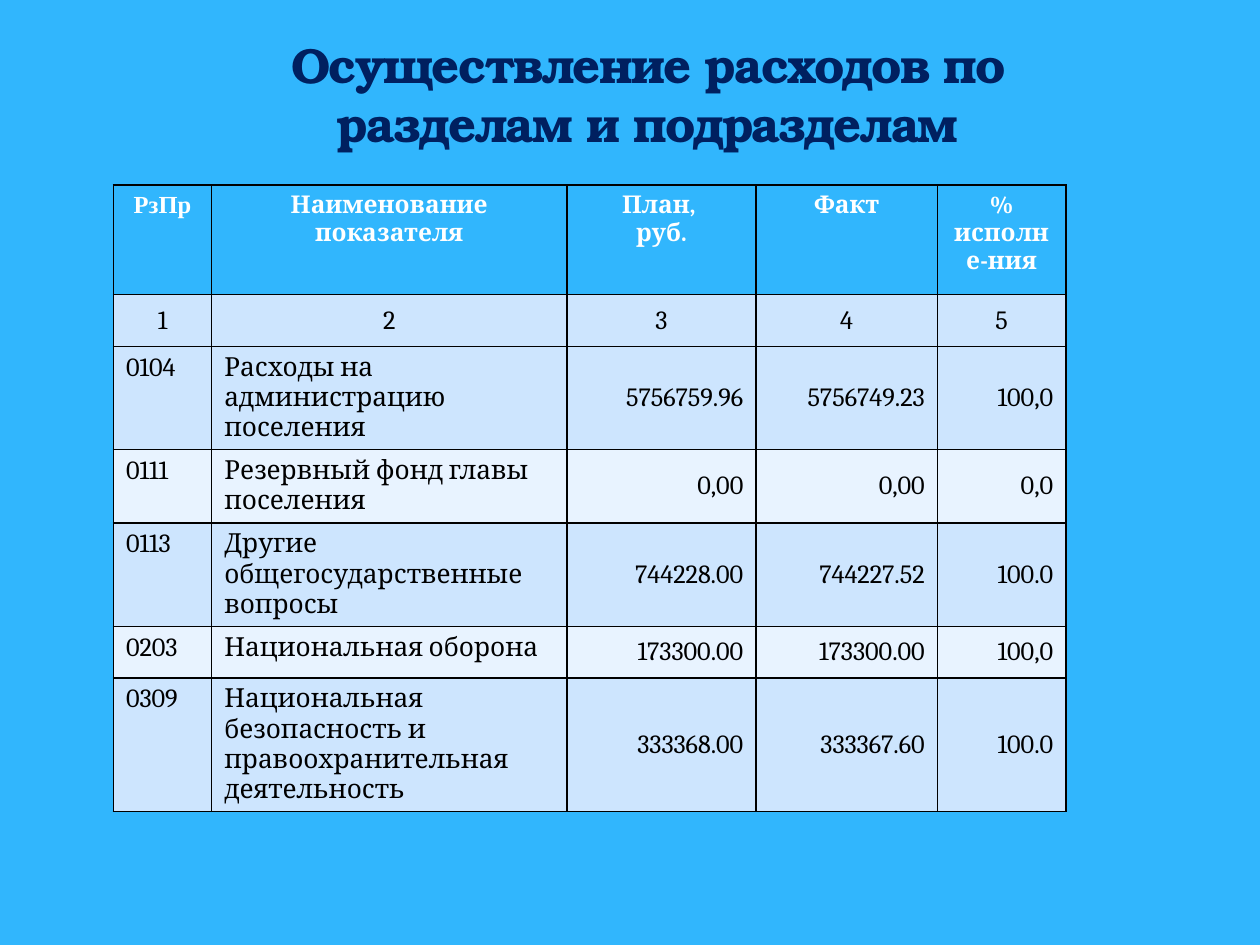
from dataclasses import dataclass

from lxml.etree import SubElement
from pptx import Presentation
from pptx.dml.color import RGBColor
from pptx.enum.text import MSO_ANCHOR, MSO_AUTO_SIZE, PP_ALIGN
from pptx.oxml.ns import qn
from pptx.util import Pt

BLUE, NAVY, WHITE, BLACK = "31B6FD", "002060", "FFFFFF", "000000"
BAND_DARK, BAND_LIGHT = "CDE5FE", "E8F3FF"


@dataclass(frozen=True)
class CellStyle:
    fill: str
    color: str = BLACK
    size: float = 15
    bold: bool = False
    align: PP_ALIGN = PP_ALIGN.LEFT
    anchor: MSO_ANCHOR = MSO_ANCHOR.TOP
    font: str = "Cambria"


COLUMN_WIDTHS = [56.2, 203, 108, 103.7, 73.4]
HEADER_HEIGHT, ROW_HEIGHT = 62.6, 29.5
HEADER = ["РзПр", "Наименование показателя", "План, \nруб.", "Факт", "% исполне-ния"]
NUMBERS = ["1", "2", "3", "4", "5"]
EXPENSES = [
    ["0104", "Расходы на администрацию поселения", "5756759.96", "5756749.23", "100,0"],
    ["0111", "Резервный фонд главы поселения", "0,00", "0,00", "0,0"],
    ["0113", "Другие общегосударственные вопросы", "744228.00", "744227.52", "100.0"],
    ["0203", "Национальная оборона", "173300.00", "173300.00", "100,0"],
    ["0309", "Национальная безопасность и правоохранительная деятельность",
     "333368.00", "333367.60", "100.0"],
]


def rgb(color: str) -> RGBColor:
    return RGBColor.from_string(color)


def format_text(text_frame, font: str, size: float, color: str, bold: bool, align) -> None:
    for paragraph in text_frame.paragraphs:
        paragraph.alignment = align
        for run in paragraph.runs:
            run.font.name = font
            run.font.size = Pt(size)
            run.font.bold = bold
            run.font.color.rgb = rgb(color)


def add_borders(cell, color: str, width: float) -> None:
    properties = cell._tc.get_or_add_tcPr()
    for index, side in enumerate(("a:lnL", "a:lnR", "a:lnT", "a:lnB")):
        line = SubElement(properties, qn(side), w=str(Pt(width)))
        fill = SubElement(line, qn("a:solidFill"))
        SubElement(fill, qn("a:srgbClr"), val=color)
        # Borders come before the fill in the cell properties
        properties.insert(index, line)


def style_for(row: int, column: int) -> CellStyle:
    if row == 0:
        font = "Times New Roman" if column == 0 else "Cambria"
        return CellStyle(BLUE, WHITE, 14, True, PP_ALIGN.CENTER, font=font)
    if row == 1:
        return CellStyle(BAND_DARK, align=PP_ALIGN.CENTER, anchor=MSO_ANCHOR.MIDDLE)
    fill = BAND_LIGHT if row % 2 else BAND_DARK
    if column < 2:
        return CellStyle(fill)
    return CellStyle(fill, align=PP_ALIGN.RIGHT, anchor=MSO_ANCHOR.MIDDLE)


def fill_cell(cell, text: str, style: CellStyle) -> None:
    cell.text_frame.text = text
    cell.vertical_anchor = style.anchor
    cell.fill.solid()
    cell.fill.fore_color.rgb = rgb(style.fill)
    format_text(cell.text_frame, style.font, style.size, style.color, style.bold, style.align)
    add_borders(cell, BLACK, 1)


def add_expense_table(slide) -> None:
    rows = [HEADER, NUMBERS, *EXPENSES]
    height = HEADER_HEIGHT + ROW_HEIGHT * (len(rows) - 1)
    table = slide.shapes.add_table(
        len(rows), len(HEADER), Pt(64.8), Pt(105.8), Pt(sum(COLUMN_WIDTHS)), Pt(height)
    ).table
    for column, width in zip(table.columns, COLUMN_WIDTHS):
        column.width = Pt(width)
    for row_index, texts in enumerate(rows):
        table.rows[row_index].height = Pt(ROW_HEIGHT if row_index else HEADER_HEIGHT)
        for column_index, text in enumerate(texts):
            fill_cell(table.cell(row_index, column_index), text,
                      style_for(row_index, column_index))


def set_title(slide, text: str) -> None:
    title = slide.shapes.title
    title.left, title.top, title.width, title.height = Pt(93.6), Pt(54.7), Pt(553), Pt(36)
    text_frame = title.text_frame
    text_frame.text = text
    text_frame.word_wrap = True
    text_frame.auto_size = MSO_AUTO_SIZE.NONE
    text_frame.vertical_anchor = MSO_ANCHOR.BOTTOM
    format_text(text_frame, "TeX Gyre Bonum", 28, NAVY, True, PP_ALIGN.CENTER)
    # Tighten the letters by one point
    text_frame.paragraphs[0].runs[0].font._element.set("spc", "-100")


def main() -> None:
    presentation = Presentation()
    presentation.slide_width, presentation.slide_height = Pt(720), Pt(540)
    slide = presentation.slides.add_slide(presentation.slide_layouts[5])

    # Background
    slide.background.fill.solid()
    slide.background.fill.fore_color.rgb = rgb(BLUE)

    # Table and title
    add_expense_table(slide)
    set_title(slide, "Осуществление расходов по разделам и подразделам")

    presentation.save("out.pptx")


if __name__ == "__main__":
    main()
